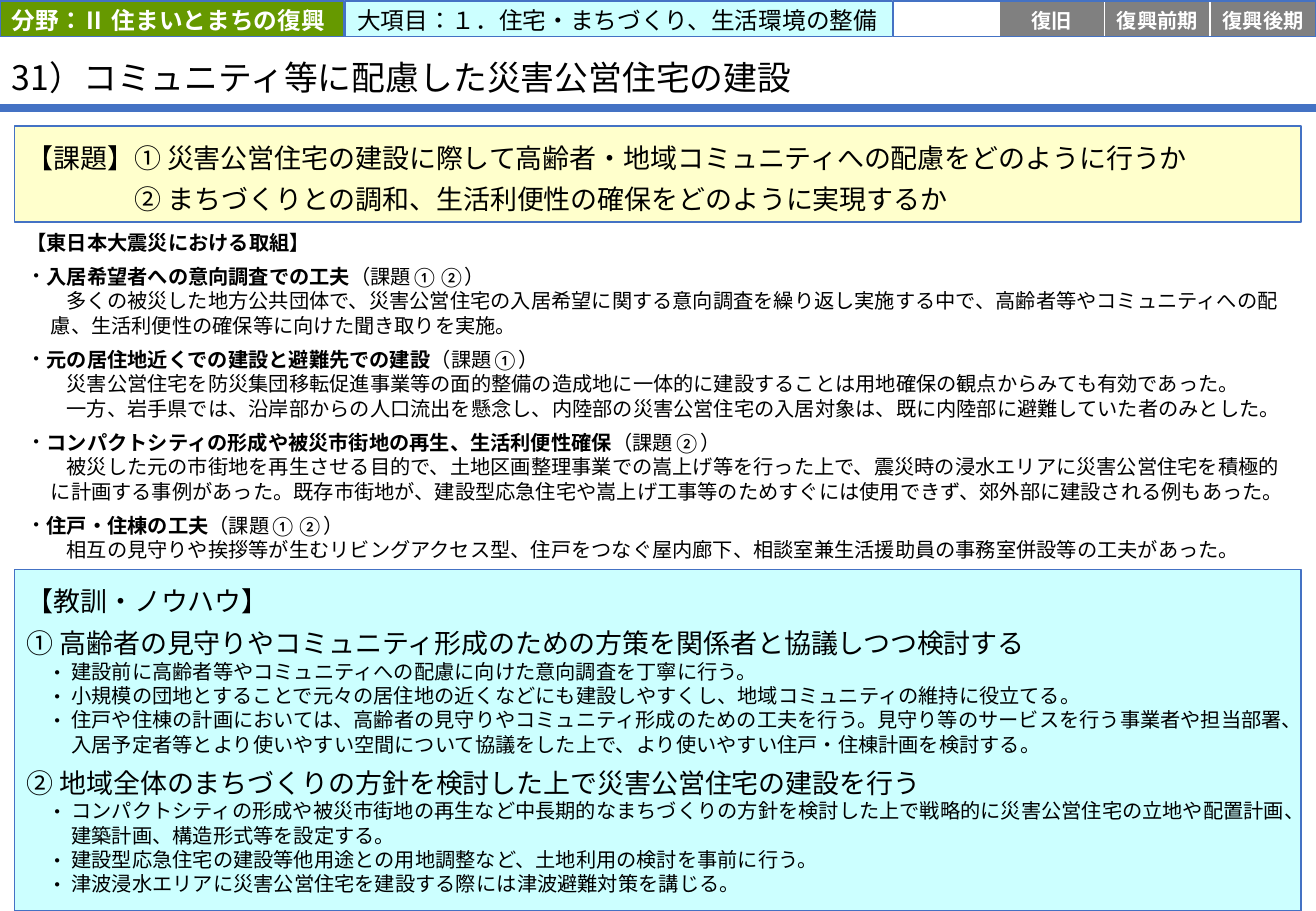
from lxml.etree import SubElement
from pptx import Presentation
from pptx.dml.color import RGBColor
from pptx.enum.lang import MSO_LANGUAGE_ID as Language
from pptx.enum.shapes import MSO_CONNECTOR as Connector, MSO_SHAPE as Shape
from pptx.enum.text import MSO_ANCHOR as Anchor, PP_ALIGN as Align
from pptx.oxml.ns import qn
from pptx.util import Inches, Pt

COLOURS = {"blue": "4472C4", "green": "669900", "cyan": "CCFFFF", "yellow": "FFFFCC",
           "grey": "808080", "white": "FFFFFF", "black": "000000"}
LATIN, JAPANESE = "Calibri", "Noto Sans CJK JP"
MARGIN = 1.11
CONTENT = 100 - 2 * MARGIN
HEADER_TOP, HEADER_HEIGHT = 0.13, 3.87
STAGE_LEFT = 67.87
STAGE_WIDTH = (100 - STAGE_LEFT) / 4

ACTIVITIES = [
    ("入居希望者への意向調査での工夫", "（課題①②）", [
        "多くの被災した地方公共団体で、災害公営住宅の入居希望に関する意向調査を繰り返し実施する中で、高齢者等やコミュニティへの配慮、生活利便性の確保等に向けた聞き取りを実施。"]),
    ("元の居住地近くでの建設と避難先での建設", "（課題①）", [
        "災害公営住宅を防災集団移転促進事業等の面的整備の造成地に一体的に建設することは用地確保の観点からみても有効であった。",
        "一方、岩手県では、沿岸部からの人口流出を懸念し、内陸部の災害公営住宅の入居対象は、既に内陸部に避難していた者のみとした。"]),
    ("コンパクトシティの形成や被災市街地の再生、生活利便性確保", "（課題②）", [
        "被災した元の市街地を再生させる目的で、土地区画整理事業での嵩上げ等を行った上で、震災時の浸水エリアに災害公営住宅を積極的に計画する事例があった。既存市街地が、建設型応急住宅や嵩上げ工事等のためすぐには使用できず、郊外部に建設される例もあった。"]),
    ("住戸・住棟の工夫", "（課題①②）", [
        "相互の見守りや挨拶等が生むリビングアクセス型、住戸をつなぐ屋内廊下、相談室兼生活援助員の事務室併設等の工夫があった。"]),
]
LESSONS = [
    ("① 高齢者の見守りやコミュニティ形成のための方策を関係者と協議しつつ検討する", [
        "建設前に高齢者等やコミュニティへの配慮に向けた意向調査を丁寧に行う。",
        "小規模の団地とすることで元々の居住地の近くなどにも建設しやすくし、地域コミュニティの維持に役立てる。",
        "住戸や住棟の計画においては、高齢者の見守りやコミュニティ形成のための工夫を行う。見守り等のサービスを行う事業者や担当部署、入居予定者等とより使いやすい空間について協議をした上で、より使いやすい住戸・住棟計画を検討する。"]),
    ("② 地域全体のまちづくりの方針を検討した上で災害公営住宅の建設を行う", [
        "コンパクトシティの形成や被災市街地の再生など中長期的なまちづくりの方針を検討した上で戦略的に災害公営住宅の立地や配置計画、建築計画、構造形式等を設定する。",
        "建設型応急住宅の建設等他用途との用地調整など、土地利用の検討を事前に行う。",
        "津波浸水エリアに災害公営住宅を建設する際には津波避難対策を講じる。"]),
]


def colour(name):
    return RGBColor.from_string(COLOURS[name])


def write(shape, *texts, size=12, font=JAPANESE, ink="black", bold=(False,), align=Align.LEFT,
          before=0, spacing=None, margin=0, indent=0, bullet=None):
    """Add one paragraph with a run for each text; bold holds a flag for each run."""
    frame = shape.text_frame
    first = frame.paragraphs[0]
    paragraph = frame.add_paragraph() if first.runs else first
    paragraph.alignment = align
    paragraph.space_before = Pt(before)
    paragraph.line_spacing = Pt(spacing or size * 1.2)
    properties = paragraph._p.get_or_add_pPr()
    properties.set("marL", str(Inches(margin)))
    properties.set("indent", str(Inches(indent)))
    if bullet:
        SubElement(properties, qn("a:buFont"), typeface=font)
        SubElement(properties, qn("a:buChar"), char=bullet)
    for text, is_bold in zip(texts, bold):
        run = paragraph.add_run()
        run.text = text
        run.font.size, run.font.bold = Pt(size), is_bold
        run.font.language_id = Language.JAPANESE
        run.font.color.rgb = colour(ink)
        run.font.name = font
        SubElement(run._r.get_or_add_rPr(), qn("a:ea"), typeface=font)


class SlideBuilder:
    """Places elements on a grid of 100 columns by 100 rows."""

    def __init__(self, presentation):
        self.column = presentation.slide_width / 100
        self.row = presentation.slide_height / 100
        self.slide = presentation.slides.add_slide(presentation.slide_layouts[6])

    def place(self, left, top, width, height):
        return (round(left * self.column), round(top * self.row),
                round(width * self.column), round(height * self.row))

    def set_frame(self, shape, insets, anchor):
        frame = shape.text_frame
        frame.word_wrap = True
        frame.vertical_anchor = anchor
        (frame.margin_left, frame.margin_top,
         frame.margin_right, frame.margin_bottom) = map(Inches, insets)
        return shape

    def box(self, *area, fill=None, line=None, insets=(0.1, 0.02, 0.1, 0), anchor=Anchor.MIDDLE):
        shape = self.slide.shapes.add_shape(Shape.RECTANGLE, *self.place(*area))
        shape.shadow.inherit = False
        for part, name in ((shape.fill, fill), (shape.line.fill, line)):
            if name:
                part.solid()
                part.fore_color.rgb = colour(name)
            else:
                part.background()
        if line:
            shape.line.width = Pt(1)
        return self.set_frame(shape, insets, anchor)

    def label(self, *area, insets):
        return self.set_frame(self.slide.shapes.add_textbox(*self.place(*area)),
                              insets, Anchor.MIDDLE)

    def rule(self, top, name, width):
        left, y, right, _ = self.place(0, top, 100, 0)
        line = self.slide.shapes.add_connector(Connector.STRAIGHT, left, y, right, y)
        line.line.color.rgb = colour(name)
        line.line.width = Pt(width)
        SubElement(line._element.spPr, qn("a:effectLst"))


def add_header(builder):
    field = builder.box(0, HEADER_TOP, 26.13, HEADER_HEIGHT, fill="green", line="blue")
    write(field, "分野：Ⅱ 住まいとまちの復興", size=14, font=LATIN, ink="white", bold=[True])
    topic = builder.box(26.22, HEADER_TOP, 41.83, HEADER_HEIGHT, fill="cyan", line="blue")
    write(topic, "大項目：１．住宅・まちづくり、生活環境の整備", size=14, font=LATIN)
    for index, stage in enumerate(("", "復旧", "復興前期", "復興後期")):
        cell = builder.box(STAGE_LEFT + index * STAGE_WIDTH, HEADER_TOP, STAGE_WIDTH,
                           HEADER_HEIGHT, fill="grey" if stage else "white", line="white",
                           insets=(0, 0.02, 0, 0))
        if stage:
            write(cell, stage, font=LATIN, ink="white", bold=[True], align=Align.CENTER)
    builder.box(STAGE_LEFT, HEADER_TOP, 4 * STAGE_WIDTH, HEADER_HEIGHT, line="blue")


def add_activities(builder):
    box = builder.box(MARGIN, 25.47, CONTENT, 36, fill="white", insets=(0.1, 0.05, 0.1, 0.05))
    write(box, "【東日本大震災における取組】", font=LATIN, bold=[True])
    for heading, issue, details in ACTIVITIES:
        write(box, heading, issue, font=LATIN, bold=[True, False], before=6,
              margin=0.08, indent=-0.08, bullet="・")
        for detail in details:
            write(box, detail, margin=0.2, indent=0.13)


def add_issues(builder):
    box = builder.box(MARGIN, 13.87, CONTENT, 10.53, fill="yellow", line="blue",
                      insets=(0.1, 0.12, 0.1, 0.12))
    write(box, "【課題】① 災害公営住宅の建設に際して高齢者・地域コミュニティへの配慮をどのように行うか",
          size=16, spacing=24)
    write(box, "② まちづくりとの調和、生活利便性の確保をどのように実現するか",
          size=16, spacing=24, margin=0.89)


def add_lessons(builder):
    box = builder.box(MARGIN, 62.53, CONTENT, 37.47, fill="cyan", line="blue",
                      insets=(0.1, 0.12, 0.1, 0), anchor=Anchor.TOP)
    write(box, "【教訓・ノウハウ】", size=16)
    for heading, points in LESSONS:
        write(box, heading, size=16, before=6)
        for point in points:
            write(box, point, margin=0.37, indent=-0.2, bullet="・")


def main():
    presentation = Presentation()
    presentation.slide_width, presentation.slide_height = Inches(10.83), Inches(7.5)
    builder = SlideBuilder(presentation)
    builder.rule(11.87, "blue", 4.5)
    add_activities(builder)
    title = builder.label(0, 4.27, 87.53, 7.73, insets=(0.1, 0.04, 0.1, 0))
    write(title, "31）コミュニティ等に配慮した災害公営住宅の建設", size=20)
    add_issues(builder)
    add_lessons(builder)
    add_header(builder)
    presentation.save("out.pptx")


if __name__ == "__main__":
    main()
